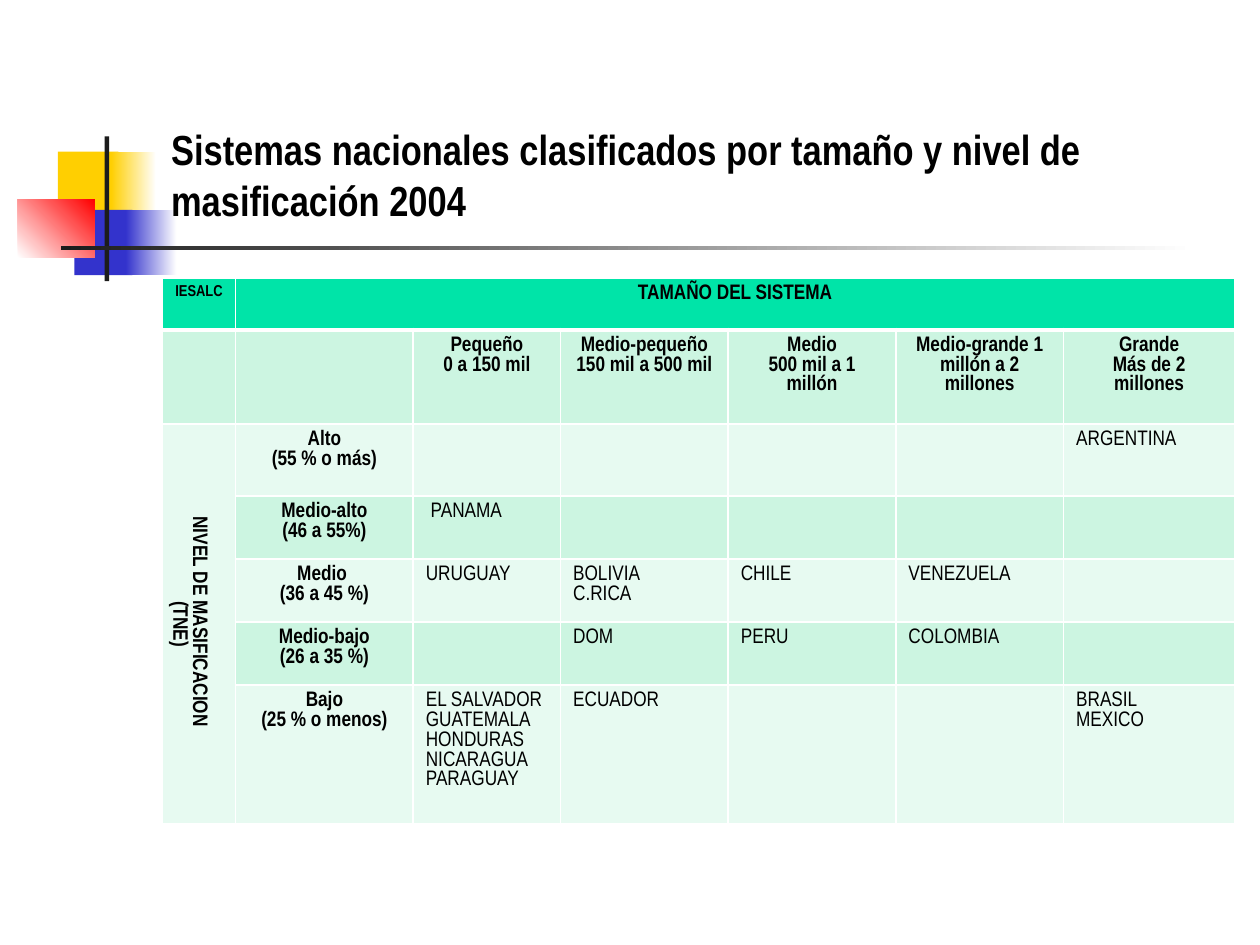
from lxml.etree import SubElement
from pptx import Presentation
from pptx.dml.color import RGBColor
from pptx.enum.shapes import MSO_SHAPE
from pptx.enum.text import MSO_ANCHOR, PP_ALIGN
from pptx.oxml.ns import qn
from pptx.util import Cm, Pt

FONT = "Arial Narrow"
COLORS = {
    "yellow": "FFCF01", "blue": "3333CC", "red": "FF0000", "ink": "1C1C1C",
    "white": "FFFFFF", "text": "000000",
    "header": "00E4A8", "dark band": "CCF5E1", "light band": "E7FAF1",
}
COLUMNS = [1.47, 3.58, 2.97, 3.38, 3.38, 3.38, 3.45]
ROWS = [1.04, 1.9, 1.45, 1.14, 1.04, 1.04, 2.24]
CELLS = [
    ["IESALC", "TAMAÑO DEL SISTEMA", "", "", "", "", ""],
    ["", "", "Pequeño\n0 a 150 mil", "Medio-pequeño\n150 mil a 500 mil",
     "Medio\n500 mil a 1 millón", "Medio-grande 1 millón a 2 millones",
     "Grande\nMás de 2 millones"],
    ["NIVEL DE MASIFICACION \n(TNE)", "Alto\n(55 % o más)", "", "", "", "", "ARGENTINA"],
    ["", "Medio-alto\n(46 a 55%)", " PANAMA", "", "", "", ""],
    ["", "Medio \n(36 a 45 %)", "URUGUAY", "BOLIVIA\nC.RICA", "CHILE", "VENEZUELA", ""],
    ["", "Medio-bajo\n(26 a 35 %)", "", "DOM", "PERU", "COLOMBIA", ""],
    ["", "Bajo\n(25 % o menos)", "EL SALVADOR\nGUATEMALA\nHONDURAS\nNICARAGUA\nPARAGUAY",
     "ECUADOR", "", "", "BRASIL\nMEXICO"],
]


def rgb(name):
    return RGBColor.from_string(COLORS[name])


def style_text(tf, size, bold, align=PP_ALIGN.LEFT):
    for p in tf.paragraphs:
        p.alignment = align
        for r in p.runs:
            r.font.name, r.font.size, r.font.bold = FONT, Pt(size), bold
            r.font.color.rgb = rgb("text")


def add_block(slide, x, y, w, h, start, end=None, angle=0):
    """Borderless rectangle, plain or fading from start to end."""
    s = slide.shapes.add_shape(MSO_SHAPE.RECTANGLE, Cm(x), Cm(y), Cm(w), Cm(h))
    s.shadow.inherit = False
    s.line.fill.background()
    if end is None:
        s.fill.solid()
        s.fill.fore_color.rgb = rgb(start)
        return
    s.fill.gradient()
    s.fill.gradient_angle = angle
    for stop, name, position in zip(s.fill.gradient_stops, (start, end), (0, 1)):
        stop.color.rgb = rgb(name)
        stop.position = position


def add_ornament(slide, x, y):
    """Overlapping squares crossed by a vertical and a fading horizontal bar."""
    blocks = [
        (0.81, 0.31, 1.22, 1.32, "yellow"),
        (1.88, 0.31, 0.91, 1.32, "yellow", "white"),
        (1.14, 1.48, 1.17, 1.32, "blue"),
        (2.18, 1.48, 1.02, 1.32, "blue", "white"),
        (0, 1.27, 1.55, 1.17, "white", "red", 45),
        (1.75, 0, 0.09, 2.92, "ink"),
        (0.87, 2.2, 22.86, 0.09, "ink", "white"),
    ]
    for dx, dy, *rest in blocks:
        add_block(slide, x + dx, y + dy, *rest)


def add_title(slide, x, y, w, h):
    tf = slide.shapes.add_textbox(Cm(x), Cm(y), Cm(w), Cm(h)).text_frame
    tf.word_wrap = True
    tf.vertical_anchor = MSO_ANCHOR.BOTTOM
    tf.text = "Sistemas nacionales clasificados por tamaño y nivel de masificación 2004"
    style_text(tf, 24, True)


def set_borders(cell, bottom):
    tcPr = cell._tc.get_or_add_tcPr()
    widths = {"lnL": 1, "lnR": 1, "lnT": 1, "lnB": bottom}
    for i, (tag, width) in enumerate(widths.items()):
        ln = SubElement(tcPr, qn(f"a:{tag}"), w=str(Pt(width)))
        fill = SubElement(ln, qn("a:solidFill"))
        SubElement(fill, qn("a:srgbClr"), val=COLORS["white"])
        tcPr.insert(i, ln)  # borders come before the fill


def add_systems_table(slide, x, y):
    table = slide.shapes.add_table(
        len(ROWS), len(COLUMNS), Cm(x), Cm(y), Cm(sum(COLUMNS)), Cm(sum(ROWS))).table
    for column, width in zip(table.columns, COLUMNS):
        column.width = Cm(width)
    for row, height in zip(table.rows, ROWS):
        row.height = Cm(height)

    for i, texts in enumerate(CELLS):
        band = "header" if i == 0 else "dark band" if i % 2 else "light band"
        for j, text in enumerate(texts):
            cell = table.cell(i, j)
            cell.fill.solid()
            cell.fill.fore_color.rgb = rgb(band)
            set_borders(cell, 3 if i == 0 else 1)
            if not text:
                continue
            cell.text_frame.text = text
            if (i, j) == (0, 0):
                style_text(cell.text_frame, 9, True)
            else:
                label = i < 2 or j < 2
                align = PP_ALIGN.CENTER if label else PP_ALIGN.LEFT
                style_text(cell.text_frame, 12, label, align)

    # Size heading across, level heading down the side
    table.cell(0, 1).merge(table.cell(0, 6))
    level = table.cell(2, 0)
    level.merge(table.cell(6, 0))
    level.vertical_anchor = MSO_ANCHOR.MIDDLE
    level._tc.get_or_add_tcPr().set("vert", "vert")


def main():
    prs = Presentation()
    prs.slide_width, prs.slide_height = Cm(25.4), Cm(19.05)
    slide = prs.slides.add_slide(prs.slide_layouts[6])
    add_ornament(slide, 0.36, 2.75)
    add_title(slide, 3.2, 1.98, 21.64, 2.67)
    add_systems_table(slide, 3.28, 5.61)
    prs.save("out.pptx")


if __name__ == "__main__":
    main()
